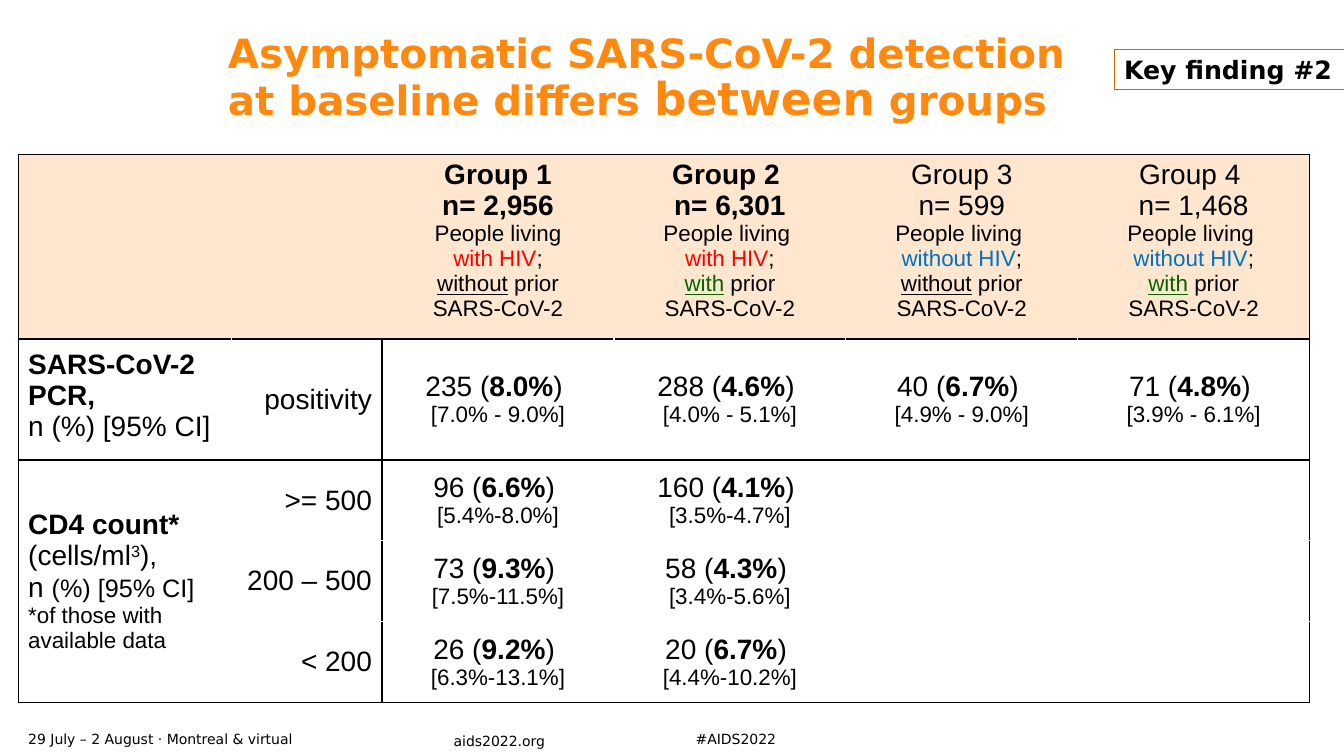
"""Build the slide on SARS-CoV-2 detection by group at baseline."""
from dataclasses import dataclass

from lxml.etree import SubElement
from pptx import Presentation
from pptx.dml.color import RGBColor
from pptx.enum.shapes import MSO_SHAPE
from pptx.enum.text import MSO_ANCHOR, PP_ALIGN
from pptx.oxml.ns import qn
from pptx.util import Inches, Pt


@dataclass(frozen=True)
class Theme:
    sans: str = "DejaVu Sans"
    body: str = "Arial"
    black: str = "000000"
    white: str = "FFFFFF"
    orange: str = "FF890E"
    frame: str = "CA6700"
    peach: str = "FFE7CF"
    red: str = "FF0000"
    blue: str = "0070C0"
    green: str = "006600"
    title: float = 28.8
    stress: float = 32.4
    large: int = 20
    tag: int = 18
    small: int = 16
    foot: int = 10


theme = Theme()


def write(frame, lines, align=PP_ALIGN.LEFT, space=None, **base):
    """Fill a text frame; each line is a list of (text, format) parts."""
    for i, line in enumerate(lines):
        para = frame.paragraphs[0] if i == 0 else frame.add_paragraph()
        para.alignment = align
        if space:
            para.line_spacing = space
        for text, extra in line:
            if text == "\n":
                para.add_line_break()
                continue
            form = {"face": theme.body, "size": theme.large, "color": theme.black} | base | extra
            run = para.add_run()
            run.text = text
            font = run.font
            font.name = form["face"]
            font.size = Pt(form["size"])
            font.bold = form.get("bold", False)
            font.underline = form.get("under", False)
            font.color.rgb = RGBColor.from_string(form["color"])
            if "raised" in form:
                run._r.get_or_add_rPr().set("baseline", str(form["raised"] * 1000))


def edge(cell, side, color):
    """Draw one side of a cell, or clear it when color is None."""
    line = SubElement(cell._tc.get_or_add_tcPr(), qn(f"a:ln{side}"), w=str(Pt(1)))
    if color:
        fill = SubElement(line, qn("a:solidFill"))
        SubElement(fill, qn("a:srgbClr"), val=color)
    else:
        SubElement(line, qn("a:noFill"))


deck = Presentation()
deck.slide_width, deck.slide_height = Inches(13.33), Inches(7.5)
slide = deck.slides.add_slide(deck.slide_layouts[6])
shapes = slide.shapes

bold = {"bold": True}
small = {"size": theme.small}

big = {"size": theme.stress}
labels = [
    (0.28, 7.21, 4.02, 0.24, [("29 July – 2 August · Montreal & virtual", {})], {}),
    (4.5, 7.23, 1.93, 0.24, [("aids2022.org", {})], {}),
    (6.9, 7.21, 1.93, 0.24, [("#AIDS2022", {})], {}),
    (2.26, 0.33, 8.81, 1.14,
     [("Asymptomatic SARS-CoV-2 detection at baseline differs ", {}), ("between", big), (" groups", {})],
     {"size": theme.title, "color": theme.orange, "bold": True, "space": 0.9}),
]
for left, top, width, height, line, form in labels:
    frame = shapes.add_textbox(Inches(left), Inches(top), Inches(width), Inches(height)).text_frame
    frame.word_wrap = True
    frame.margin_left = frame.margin_right = frame.margin_top = frame.margin_bottom = 0
    frame.vertical_anchor = MSO_ANCHOR.TOP if form else MSO_ANCHOR.MIDDLE
    write(frame, [line], **({"face": theme.sans, "size": theme.foot} | form))

widths = [2.12, 1.49, 2.3, 2.3, 2.3, 2.3]
heights = [1.7, 1.13, 0.75, 0.75, 0.75]
holder = shapes.add_table(len(heights), len(widths), Inches(0.18), Inches(1.53),
                          Inches(sum(widths)), Inches(sum(heights)))
table = holder.table
table.first_row = table.horz_banding = False
for col, width in zip(table.columns, widths):
    col.width = Inches(width)
for row, height in zip(table.rows, heights):
    row.height = Inches(height)
table.cell(2, 0).merge(table.cell(4, 0))

for r in range(len(heights)):
    for c in range(len(widths)):
        cell = table.cell(r, c)
        inner = theme.white if r else None
        edge(cell, "L", theme.black if c == 0 or (r and c == 2) else inner)
        edge(cell, "R", theme.black if c == 5 or (r and c == 1) else inner)
        edge(cell, "T", theme.black if r < 3 else theme.white if c else None)
        edge(cell, "B", theme.black if r in (0, 1, 4) or (r, c) == (2, 0) else theme.white)
        if r < 2:
            cell.fill.solid()
            cell.fill.fore_color.rgb = RGBColor.from_string(theme.white if r else theme.peach)
        else:
            cell.fill.background()
        if r:
            cell.margin_top = cell.margin_bottom = Inches(0.1)
            cell.vertical_anchor = MSO_ANCHOR.TOP if (r, c) == (1, 0) else MSO_ANCHOR.MIDDLE

with_hiv = ("with HIV", {"color": theme.red})
no_hiv = ("without HIV", {"color": theme.blue})
prior = ("with", {"color": theme.green, "under": True})
naive = ("without", {"under": True})
groups = [
    ("Group 1", "n= 2,956", "People living", with_hiv, naive, True),
    ("Group 2 ", "n= 6,301", "People living ", with_hiv, prior, True),
    ("Group 3", "n= 599", "People living ", no_hiv, naive, False),
    ("Group 4 ", "n= 1,468", "People living ", no_hiv, prior, False),
]
for c, (name, count, people, status, past, strong) in enumerate(groups, 2):
    head = {"size": theme.large, "bold": strong}
    lines = [[(name, head)], [(count, head)], [(people, {})], [status, (";", {})],
             [past, (" prior", {}), ("\n", {}), ("SARS-CoV-2", {})]]
    write(table.cell(0, c).text_frame, lines, align=PP_ALIGN.CENTER, size=theme.small)

write(table.cell(1, 0).text_frame, [[("SARS-CoV-2 PCR, ", bold)], [("n (%) [95% CI]", {})]])
write(table.cell(2, 0).text_frame, [
    [("CD4 count*  ", bold), ("(cells/ml", {}), ("3", {"raised": 30}), ("), ", {})],
    [("n ", {}), ("(%) [95% CI] ", {"size": theme.tag})],
    [("*of those with available data", small)],
])

results = [
    ("positivity", [("235", "8.0%", "7.0% - 9.0%"), ("288", "4.6%", "4.0% - 5.1%"),
                    ("40", "6.7%", "4.9% - 9.0%"), ("71", "4.8%", "3.9% - 6.1%")]),
    (">= 500", [("96", "6.6%", "5.4%-8.0%"), ("160", "4.1%", "3.5%-4.7%")]),
    ("200 – 500", [("73", "9.3%", "7.5%-11.5%"), ("58", "4.3%", "3.4%-5.6%")]),
    ("< 200", [("26", "9.2%", "6.3%-13.1%"), ("20", "6.7%", "4.4%-10.2%")]),
]
for r, (level, counts) in enumerate(results, 1):
    write(table.cell(r, 1).text_frame, [[(level, {})]], align=PP_ALIGN.RIGHT)
    for c, (count, rate, span) in enumerate(counts, 2):
        lines = [[(f"{count} (", {}), (rate, bold), (") ", {})], [(f"[{span}]", small)]]
        write(table.cell(r, c).text_frame, lines, align=PP_ALIGN.CENTER)

badge = shapes.add_shape(MSO_SHAPE.RECTANGLE, Inches(11.05), Inches(0.49), Inches(2.29), Inches(0.4))
badge.shadow.inherit = False
badge.fill.background()
badge.line.color.rgb = RGBColor.from_string(theme.frame)
badge.line.width = Pt(0.75)
badge.text_frame.word_wrap = False
badge.text_frame.vertical_anchor = MSO_ANCHOR.TOP
write(badge.text_frame, [[("Key finding #2", bold)]], face=theme.sans, size=theme.tag)

deck.save("out.pptx")
